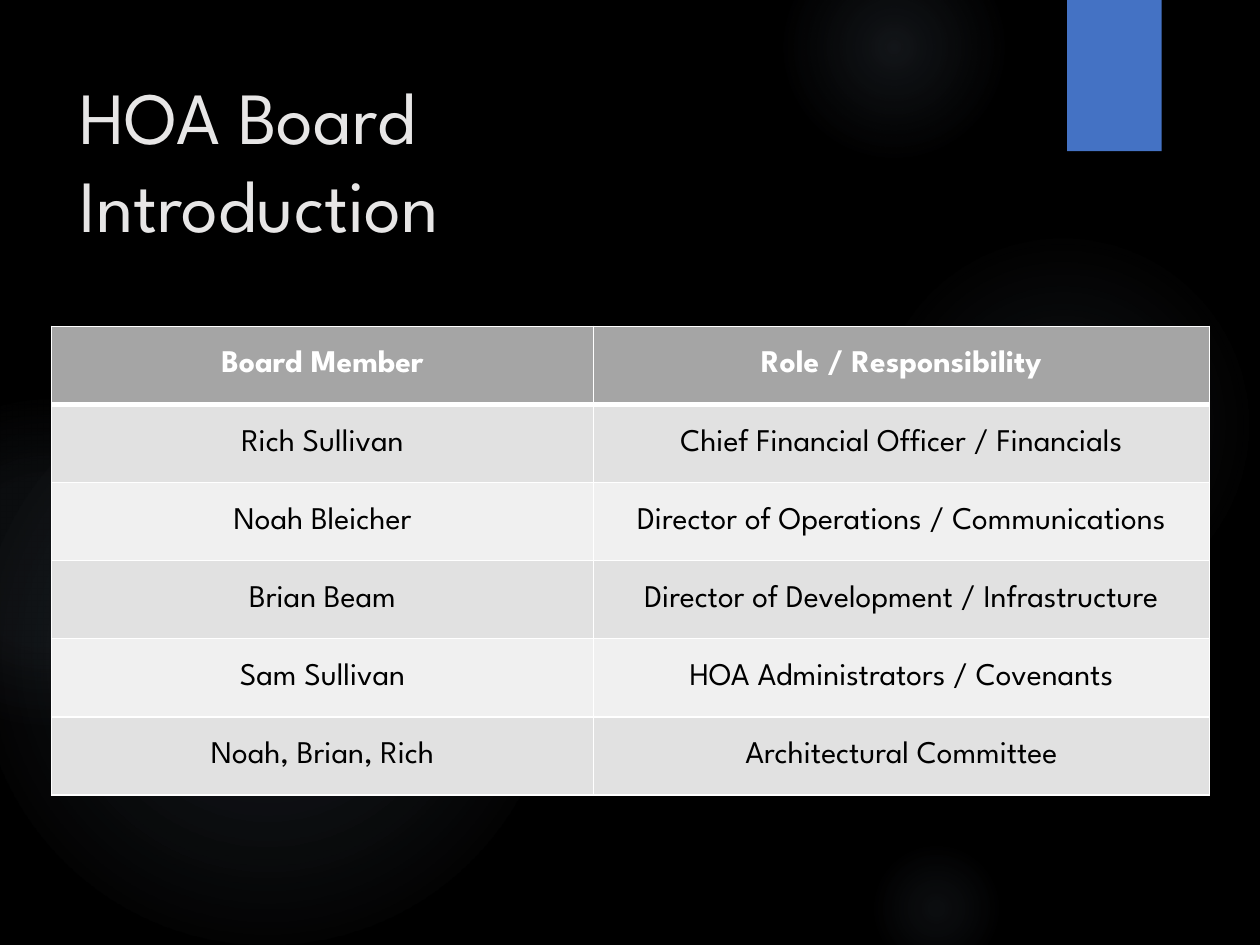
from lxml import etree
from pptx import Presentation
from pptx import util as u
from pptx.dml.color import RGBColor
from pptx.enum import shapes, text
from pptx.oxml import ns

COLORS = {
    "background": "000000", "glow": "8497B0", "accent": "4472C4",
    "title": "E7E6E6", "white": "FFFFFF", "black": "000000",
    "header": "A5A5A5", "dark_band": "E1E1E1", "light_band": "F0F0F0",
}
FONT = "League Spartan"


def write_text(frame, content, size, color, bold=False, align=text.PP_ALIGN.CENTER, spacing=None):
    frame.text = content
    frame.vertical_anchor = text.MSO_ANCHOR.MIDDLE
    paragraph = frame.paragraphs[0]
    paragraph.alignment = align
    paragraph.line_spacing = spacing
    for run in paragraph.runs:
        run.font.name = FONT
        run.font.size = u.Pt(size)
        run.font.bold = bold
        run.font.color.rgb = RGBColor.from_string(COLORS[color])


def add_element(parent, tag, **attributes):
    element = etree.SubElement(parent, ns.qn(tag))
    for name, value in attributes.items():
        element.set(name, str(value))
    return element


presentation = Presentation()
presentation.slide_width = u.Inches(10)
presentation.slide_height = u.Inches(7.5)
slide = presentation.slides.add_slide(presentation.slide_layouts[5])
slide.background.fill.solid()
slide.background.fill.fore_color.rgb = RGBColor.from_string(COLORS["background"])

glows = [
    (6.89, 1.83, 3.08, [(0, 7), (36, 6), (69, 0)]),
    (6.22, -0.5, 1.75, [(0, 14), (36, 7), (73, 0)]),
    (6.89, 6.67, 1.08, [(0, 9), (36, 5), (66, 0)]),
    (-0.17, 2.92, 4.58, [(0, 11), (36, 10), (75, 0)]),
    (-0.92, 3.17, 2.58, [(0, 8), (36, 8), (72, 0)]),
]
for left, top, diameter, stops in glows:
    glow = slide.shapes.add_shape(
        shapes.MSO_SHAPE.OVAL, u.Inches(left), u.Inches(top), u.Inches(diameter), u.Inches(diameter))
    glow.shadow.inherit = False
    glow.line.fill.background()
    glow.fill.gradient()
    gradient = glow._element.spPr.find(ns.qn("a:gradFill"))
    for child in list(gradient):
        gradient.remove(child)
    stop_list = add_element(gradient, "a:gsLst")
    for position, opacity in stops:
        stop = add_element(stop_list, "a:gs", pos=position * 1000)
        color = add_element(stop, "a:srgbClr", val=COLORS["glow"])
        add_element(color, "a:alpha", val=opacity * 1000)
    circle = add_element(gradient, "a:path", path="circle")
    add_element(circle, "a:fillToRect", l=50000, t=50000, r=50000, b=50000)

ribbon = slide.shapes.add_shape(
    shapes.MSO_SHAPE.RECTANGLE, u.Inches(8.47), u.Inches(0), u.Inches(0.75), u.Inches(1.2))
ribbon.shadow.inherit = False
ribbon.fill.solid()
ribbon.fill.fore_color.rgb = RGBColor.from_string(COLORS["accent"])
ribbon.line.fill.background()

title = slide.shapes.title
title.left, title.top = u.Inches(0.53), u.Inches(0.5)
title.width, title.height = u.Inches(7.72), u.Inches(1.53)
write_text(title.text_frame, "HOA Board\vIntroduction", 42, "title",
           align=text.PP_ALIGN.LEFT, spacing=u.Pt(50))
slide.shapes._spTree.append(title._element)

rows = [
    ("Board Member", "Role / Responsibility"),
    ("Rich Sullivan", "Chief Financial Officer / Financials"),
    ("Noah Bleicher", "Director of Operations / Communications"),
    ("Brian Beam", "Director of Development / Infrastructure"),
    ("Sam Sullivan", "HOA Administrators / Covenants"),
    ("Noah, Brian, Rich", "Architectural Committee"),
]
column_widths = [4.3, 4.89]
row_height = 0.62
table = slide.shapes.add_table(
    len(rows), len(column_widths), u.Inches(0.41), u.Inches(2.59),
    u.Inches(sum(column_widths)), u.Inches(row_height * len(rows))).table
for column, width in zip(table.columns, column_widths):
    column.width = u.Inches(width)

for row_index, row in enumerate(rows):
    table.rows[row_index].height = u.Inches(row_height)
    is_header = row_index == 0
    band = "header" if is_header else "dark_band" if row_index % 2 else "light_band"
    borders = {"L": 1, "R": 1, "T": 3 if row_index == 1 else 1, "B": 3 if is_header else 1}
    for column_index, content in enumerate(row):
        cell = table.cell(row_index, column_index)
        write_text(cell.text_frame, content, 18, "white" if is_header else "black", bold=is_header)
        cell.vertical_anchor = text.MSO_ANCHOR.MIDDLE
        properties = cell._tc.get_or_add_tcPr()
        for side, weight in borders.items():
            border = add_element(properties, f"a:ln{side}", w=u.Pt(weight))
            add_element(add_element(border, "a:solidFill"), "a:srgbClr", val=COLORS["white"])
        cell.fill.solid()
        cell.fill.fore_color.rgb = RGBColor.from_string(COLORS[band])

presentation.save("out.pptx")
